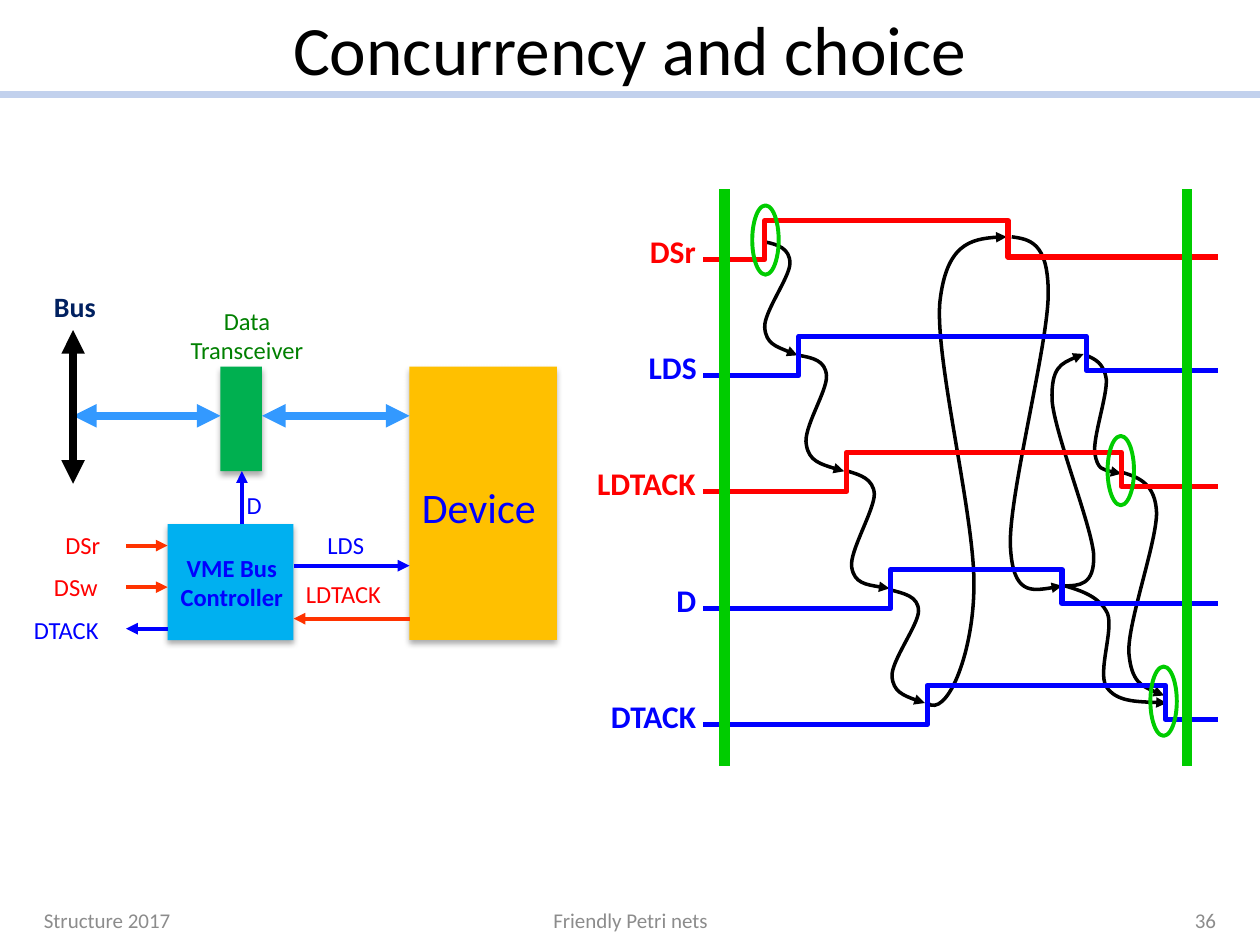
from lxml import etree
from pptx import Presentation
from pptx import util as u
from pptx.dml.color import RGBColor
from pptx.enum import shapes, text
from pptx.oxml import ns

PX = 9144
RED, BLUE, BLACK, GREEN = "FF0000", "0000FF", "000000", "00CC00"
ORANGE, SKY, GREY = "FF3300", "3399FF", "8C8C8C"
LEFT, CENTER, RIGHT = text.PP_ALIGN.LEFT, text.PP_ALIGN.CENTER, text.PP_ALIGN.RIGHT

SIGNALS = [
    ("DSr", RED, 506, 57, (158, 207, 333), (233, 400), 29),
    ("LDS", BLUE, 505, 59, (158, 234, 333), (233, 462), 27),
    ("LDTACK", RED, 464, 99, (158, 272, 333), (292, 490), 27),
    ("D", BLUE, 527, 36, (158, 307, 333), (333, 443), 27),
    ("DTACK", BLUE, 475, 88, (158, 336, 375), (368, 525), 27),
]

CAUSES = [
    [(491, 275), (504, 279), (517, 284), (518, 307), (518, 331),
     (495, 394), (496, 418), (498, 442), (511, 447), (524, 452)],
    [(444, 365), (456, 365), (469, 365), (468, 340), (466, 316),
     (437, 244), (435, 218), (434, 191), (447, 186), (460, 181)],
    [(207, 92), (217, 94), (227, 97), (227, 109), (227, 120),
     (206, 148), (207, 160), (208, 173), (221, 177), (233, 182)],
    [(234, 182), (245, 184), (255, 186), (256, 198), (257, 210),
     (237, 240), (240, 253), (242, 266), (256, 270), (270, 274)],
    [(273, 274), (283, 277), (293, 280), (294, 292), (294, 305),
     (274, 338), (276, 350), (278, 363), (292, 365), (306, 367)],
    [(306, 368), (317, 371), (329, 373), (329, 385), (329, 396),
     (307, 425), (308, 437), (309, 449), (321, 454), (334, 458)],
    [(336, 458), (351, 470), (372, 421), (373, 368), (375, 315),
     (342, 187), (346, 140), (351, 94), (375, 88), (399, 88)],
    [(403, 88), (417, 90), (432, 92), (432, 133), (432, 174),
     (400, 295), (402, 334), (404, 372), (423, 369), (443, 365)],
    [(462, 182), (469, 185), (476, 188), (478, 201), (479, 214),
     (467, 248), (469, 260), (471, 273), (480, 274), (490, 276)],
    [(445, 365), (459, 369), (473, 374), (479, 387), (484, 400),
     (471, 433), (478, 445), (486, 457), (506, 457), (526, 458)],
]


def paint(color_format, color):
    color_format.rgb = RGBColor.from_string(color)


def add(parent, tag, **attributes):
    return etree.SubElement(parent, ns.qn(tag), attributes)


def stroke(line, color, width):
    line.fill.solid()
    paint(line.fill.fore_color, color)
    line.width = u.Pt(width)


def arrowheads(spPr, *ends):
    outline = spPr.find(ns.qn("a:ln"))
    for end in ends:
        add(outline, f"a:{end}", type="triangle")


def label(slide, box, words, size, color, bold=False, align=LEFT, wrap=False, anchor=text.MSO_ANCHOR.TOP):
    frame = slide.shapes.add_textbox(*(v * PX for v in box)).text_frame
    frame.word_wrap = wrap
    frame.vertical_anchor = anchor
    frame.text = words
    for paragraph in frame.paragraphs:
        paragraph.alignment = align
        for run in paragraph.runs:
            run.font.name = "Calibri"
            run.font.size = u.Pt(size)
            run.font.bold = bold
            paint(run.font.color, color)


def connect(slide, start, end, color, width, ends=(), bend=None):
    kind = shapes.MSO_CONNECTOR.STRAIGHT if bend is None else shapes.MSO_CONNECTOR.ELBOW
    connector = slide.shapes.add_connector(kind, *(v * PX for v in (*start, *end)))
    stroke(connector.line, color, width)
    spPr = connector._element.spPr
    if bend is not None:
        share = round(100000 * (bend - start[0]) / (end[0] - start[0]))
        adjustments = spPr.find(f".//{ns.qn('a:avLst')}")
        add(adjustments, "a:gd", name="adj1", fmla=f"val {share}")
    arrowheads(spPr, *ends)
    add(spPr, "a:effectLst")


def block(slide, box, color):
    shape = slide.shapes.add_shape(shapes.MSO_SHAPE.RECTANGLE, *(v * PX for v in box))
    shape.shadow.inherit = False
    shape.fill.solid()
    paint(shape.fill.fore_color, color)
    shape.line.fill.background()
    effects = shape._element.spPr.find(ns.qn("a:effectLst"))
    shadow = add(effects, "a:outerShdw", blurRad="44450", dist="27940", dir="5400000", rotWithShape="0")
    add(add(shadow, "a:srgbClr", val=BLACK), "a:alpha", val="32000")


def ring(slide, box):
    shape = slide.shapes.add_shape(shapes.MSO_SHAPE.OVAL, *(v * PX for v in box))
    shape.shadow.inherit = False
    shape.fill.background()
    stroke(shape.line, GREEN, 2.25)


def cause(slide, points):
    start, *rest = [(x * PX, y * PX) for x, y in points]
    builder = slide.shapes.build_freeform(*start)
    builder.add_line_segments(rest, close=False)
    curve = builder.convert_to_shape()
    curve.shadow.inherit = False
    curve.fill.background()
    stroke(curve.line, BLACK, 2)
    arrowheads(curve._element.spPr, "tailEnd")
    outline = curve._element.find(f".//{ns.qn('a:path')}")
    segments = outline.findall(ns.qn("a:lnTo"))
    for i in range(0, len(segments), 3):
        bezier = add(outline, "a:cubicBezTo")
        for segment in segments[i:i + 3]:
            bezier.append(segment[0])
            outline.remove(segment)


def heading(slide, left, top, width, height):
    connect(slide, (left, top + height), (left + width, top + height), "C2D1ED", 4)
    label(slide, (left + 50, top, width - 100, height), "Concurrency and choice", 39.6, BLACK,
          align=CENTER, wrap=True, anchor=text.MSO_ANCHOR.MIDDLE)


def footer(slide, left, top, height):
    for x, width, words, align in [(25, 233, "Structure 2017", LEFT),
                                   (342, 317, "Friendly Petri nets", CENTER),
                                   (742, 233, "36", RIGHT)]:
        label(slide, (left + x, top, width, height), words, 12, GREY,
              align=align, wrap=True, anchor=text.MSO_ANCHOR.MIDDLE)


def bus_diagram(slide, left, top):
    for x, y, width, height, color in [(133, 216, 100, 92, "00B0F0"),
                                       (325, 91, 117, 217, "FFC000"),
                                       (175, 91, 33, 83, "00B050")]:
        block(slide, (left + x, top + y, width, height), color)
    both = ("headEnd", "tailEnd")
    for x1, y1, x2, y2, color, width, ends in [
        (325, 291, 233, 291, ORANGE, 2.25, both[1:]),
        (233, 249, 325, 249, BLUE, 2.25, both[1:]),
        (192, 216, 192, 174, BLUE, 2.25, both[1:]),
        (100, 233, 133, 233, ORANGE, 2.25, both[1:]),
        (100, 266, 133, 266, ORANGE, 2.25, both[1:]),
        (133, 299, 100, 299, BLUE, 2.25, both[1:]),
        (208, 130, 325, 130, SKY, 4.5, both),
        (58, 130, 175, 130, SKY, 4.5, both),
        (58, 62, 58, 184, BLACK, 4.5, both),
    ]:
        connect(slide, (left + x1, top + y1), (left + x2, top + y2), color, width, ends)
    for x, y, width, height, words, size, color, bold, align in [
        (325, 177, 122, 50, "Device", 24, BLUE, False, LEFT),
        (250, 216, 49, 34, "LDS", 14, BLUE, False, LEFT),
        (233, 255, 97, 33, "LDTACK", 14, RED, False, LEFT),
        (186, 184, 32, 34, "D", 14, BLUE, False, LEFT),
        (42, 216, 54, 33, "DSr", 14, RED, False, LEFT),
        (33, 249, 61, 33, "DSw", 14, RED, False, LEFT),
        (17, 283, 72, 34, "DTACK", 14, BLUE, False, LEFT),
        (127, 234, 114, 57, "VME Bus\nController", 14, BLUE, True, CENTER),
        (135, 38, 122, 57, "Data\nTransceiver", 14, "008000", False, CENTER),
        (33, 25, 54, 37, "Bus", 16, "002060", True, LEFT),
    ]:
        label(slide, (left + x, top + y, width, height), words, size, color, bold, align)


def timing_diagram(slide, left, top):
    for points in CAUSES:
        cause(slide, [(left + x, top + y) for x, y in points])
    for row, (name, color, name_left, name_width, rise, fall, drop) in enumerate(SIGNALS):
        low = top + 106 + round(92.25 * row)
        high = low - 31
        start, edge, end = (left + x for x in rise)
        connect(slide, (start, low), (end, high), color, 3, bend=edge)
        start, edge = (left + x for x in fall)
        connect(slide, (start, high), (left + 567, high + drop), color, 3, bend=edge)
        label(slide, (name_left, low - 27, name_width, 40), name, 18, color, bold=True)
    for x in (175, 542):
        connect(slide, (left + x, top + 50), (left + x, top + 508), GREEN, 6)
    for x, y in [(479, 246), (197, 63), (513, 429)]:
        ring(slide, (left + x, top + y, 21, 55))


def main():
    deck = Presentation()
    deck.slide_width, deck.slide_height = 1000 * PX, 750 * PX
    slide = deck.slides.add_slide(deck.slide_layouts[6])
    heading(slide, 0, 0, 1000, 75)
    timing_diagram(slide, 400, 100)
    bus_diagram(slide, 0, 200)
    footer(slide, 0, 710, 40)
    deck.save("out.pptx")


if __name__ == "__main__":
    main()
